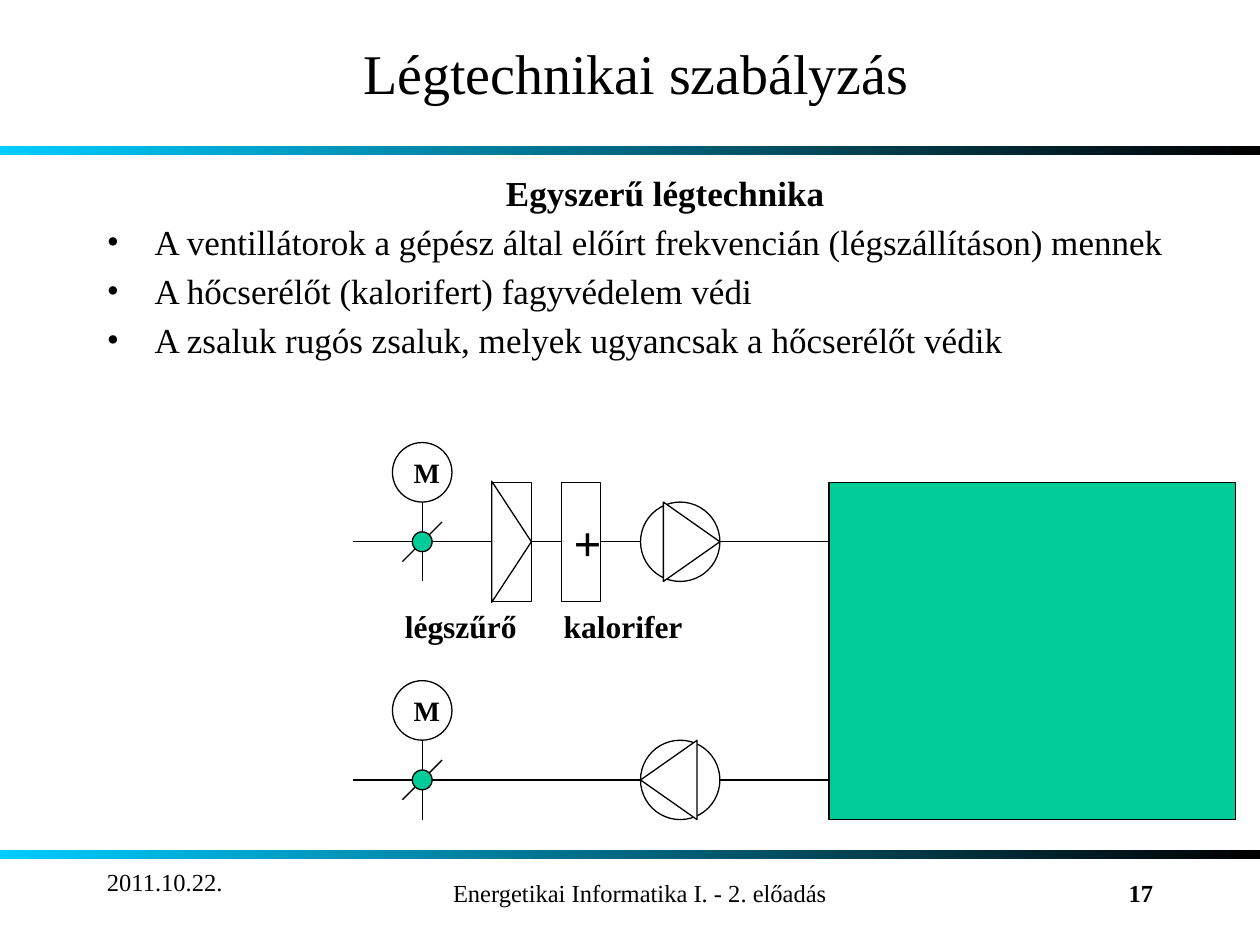
from pptx import Presentation
from pptx.dml.color import RGBColor
from pptx.enum.shapes import MSO_CONNECTOR, MSO_SHAPE
from pptx.enum.text import MSO_ANCHOR, MSO_AUTO_SIZE, PP_ALIGN
from pptx.oxml.ns import qn
from pptx.util import Inches, Pt
from lxml.etree import SubElement

WIDE, HIGH = 10, 7.5
UNIT = 0.63 / 4
LEFT, TOP = 2.8, 4.3
BLACK, WHITE, GREEN = "000000", "FFFFFF", "00CC99"
SERIF = "Times New Roman"
POINTS = [
    "A ventillátorok a gépész által előírt frekvencián (légszállításon) mennek",
    "A hőcserélőt (kalorifert) fagyvédelem védi",
    "A zsaluk rugós zsaluk, melyek ugyancsak a hőcserélőt védik",
]


def color(code):
    return RGBColor.from_string(code)


def col(n):
    return Inches(LEFT + n * UNIT)


def row(n):
    return Inches(TOP + n * UNIT)


def span(n):
    return Inches(n * UNIT)


def cells(x, y, w, h):
    return col(x), row(y), span(w), span(h)


def percent(x, y, w, h):
    pairs = zip((x, y, w, h), (WIDE, HIGH, WIDE, HIGH))
    return [Inches(part * whole / 100) for part, whole in pairs]


def style(item, values):
    for key, value in values.items():
        setattr(item, key, value)


def write(para, text, size, bold=False, align=PP_ALIGN.LEFT):
    para.alignment = align
    run = para.add_run()
    run.text = text
    style(run.font, {"size": Pt(size), "bold": bold, "name": SERIF})
    run.font.color.rgb = color(BLACK)


def label(slide, box, text, size, **form):
    shape = slide.shapes.add_textbox(*box)
    shape.text_frame.word_wrap = True
    write(shape.text_frame.paragraphs[0], text, size, **form)
    return shape


def block(host, kind, box, fill=WHITE, turn=0, text="", size=16):
    shape = host.shapes.add_shape(kind, *box)
    shape.shadow.inherit = False
    shape.rotation = turn
    shape.fill.solid()
    shape.fill.fore_color.rgb = color(fill)
    shape.line.color.rgb = color(BLACK)
    shape.line.width = Pt(0.75)
    if text:
        style(shape.text_frame, {"word_wrap": True, "vertical_anchor": MSO_ANCHOR.MIDDLE})
        write(shape.text_frame.paragraphs[0], text, size, True, PP_ALIGN.CENTER)


def wedge(host, x, y, base, depth, turn):
    box = cells(x - base / 2, y - depth / 2, base, depth)
    block(host, MSO_SHAPE.ISOSCELES_TRIANGLE, box, turn=turn)


def line(host, x1, y1, x2, y2):
    wire = host.shapes.add_connector(
        MSO_CONNECTOR.STRAIGHT, col(x1), row(y1), col(x2), row(y2))
    wire.line.color.rgb = color(BLACK)
    wire.line.width = Pt(0.75)
    SubElement(wire._element.spPr, qn("a:effectLst"))


def damper(slide, y):
    group = slide.shapes.add_group_shape()
    line(group, 3.5, y - 2, 3.5, y + 2)
    line(group, 2.5, y + 1, 4.5, y - 1)
    block(group, MSO_SHAPE.OVAL, cells(3, y - 0.5, 1, 1), GREEN)
    block(group, MSO_SHAPE.OVAL, cells(2, y - 5, 3, 3), text="M")


def fan(slide, y, side):
    group = slide.shapes.add_group_shape()
    depth = 2.85
    block(group, MSO_SHAPE.OVAL, cells(14.5, y - 2, 4, 4))
    wedge(group, 16.5 + side * (2 - depth / 2), y, 4, depth, side * 90 % 360)


def band(slide, y):
    bar = slide.shapes.add_shape(MSO_SHAPE.RECTANGLE, *percent(0, y, 100, 1))
    bar.shadow.inherit = False
    bar.line.fill.background()
    bar.fill.gradient()
    bar.fill.gradient_angle = 0
    for stop, code, place in zip(bar.fill.gradient_stops, ("00CCFF", BLACK), (0, 1)):
        stop.color.rgb = color(code)
        stop.position = place


def head(slide):
    title = slide.shapes.title
    box = percent(13, 3.7, 75, 7.8)
    style(title, dict(zip(("left", "top", "width", "height"), box)))
    style(title.text_frame, {
        "word_wrap": True, "auto_size": MSO_AUTO_SIZE.NONE,
        "vertical_anchor": MSO_ANCHOR.MIDDLE})
    write(title.text_frame.paragraphs[0], "Légtechnikai szabályzás", 32,
          align=PP_ALIGN.CENTER)


def body(slide):
    box = percent(7.5, 17.5, 90.6, 70.4)
    frame = label(slide, box, "Egyszerű légtechnika", 20, bold=True,
                  align=PP_ALIGN.CENTER).text_frame
    for text in POINTS:
        para = frame.add_paragraph()
        props = para._p.get_or_add_pPr()
        props.set("marL", str(Inches(0.38)))
        props.set("indent", str(Inches(-0.38)))
        SubElement(props, qn("a:buFont"), typeface=SERIF)
        SubElement(props, qn("a:buChar"), char="•")
        para.space_before = Pt(4)
        write(para, text, 20)


def plant(slide):
    for y, side in ((12, -1), (0, 1)):
        line(slide, 0, y, 24, y)
        damper(slide, y)
        fan(slide, y, side)
    block(slide, MSO_SHAPE.RECTANGLE, cells(24, -3, 20.5, 17), GREEN)
    block(slide, MSO_SHAPE.RECTANGLE, cells(7, -3, 2, 6))
    wedge(slide, 8, 0, 6.1, 2, 90)
    label(slide, cells(2, 3, 7.1, 2.5), "légszűrő", 18, bold=True)
    label(slide, cells(10, 3, 8, 2.5), "kalorifer", 18, bold=True)
    block(slide, MSO_SHAPE.RECTANGLE, cells(10.5, -3, 2, 6), text="+", size=28)


def foot(slide):
    label(slide, percent(7.5, 91.1, 20.8, 6.7), "2011.10.22.", 14)
    label(slide, percent(20.8, 92.3, 60, 5.6),
          "Energetikai Informatika I. - 2. előadás", 14, align=PP_ALIGN.CENTER)
    label(slide, percent(71.7, 92.3, 20.8, 5.6), "17", 14, bold=True,
          align=PP_ALIGN.RIGHT)


def main():
    deck = Presentation()
    style(deck, {"slide_width": Inches(WIDE), "slide_height": Inches(HIGH)})
    slide = deck.slides.add_slide(deck.slide_layouts[5])
    for y in (15.4, 89.9):
        band(slide, y)
    head(slide)
    body(slide)
    foot(slide)
    plant(slide)
    deck.save("out.pptx")


if __name__ == "__main__":
    main()
